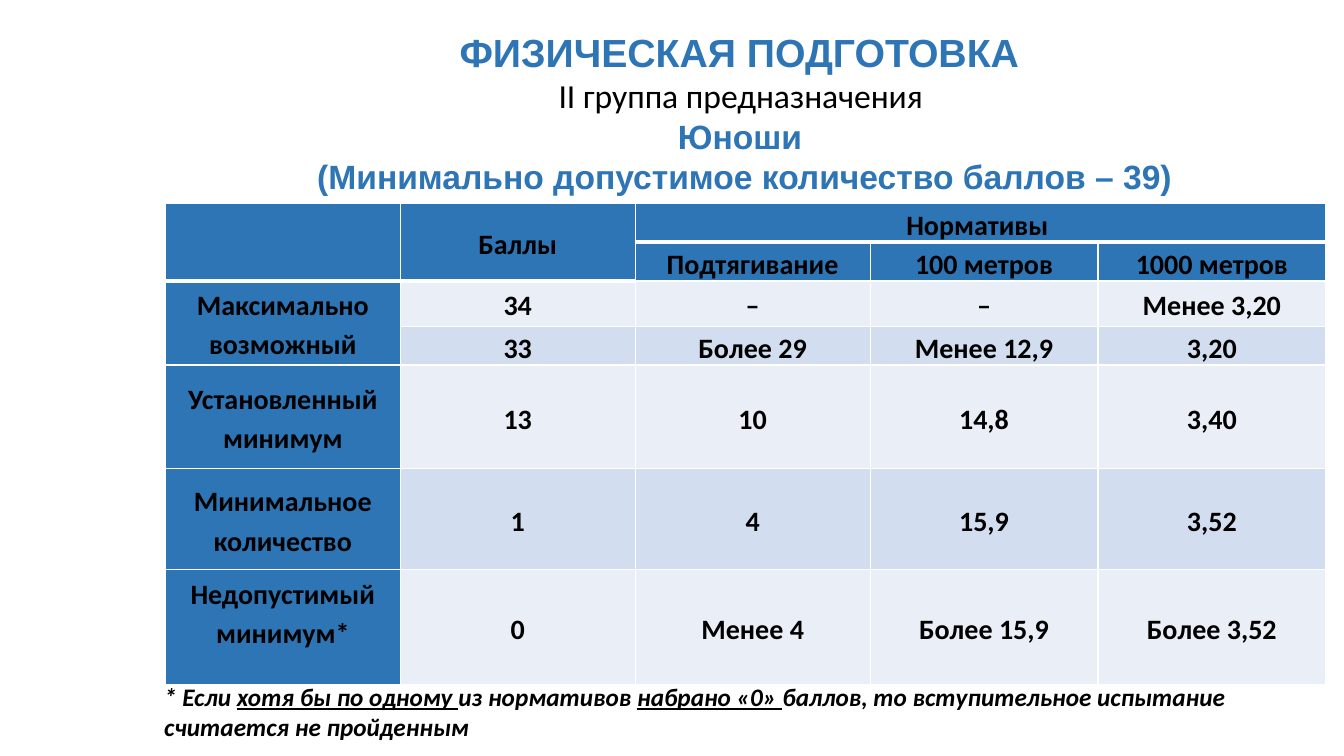
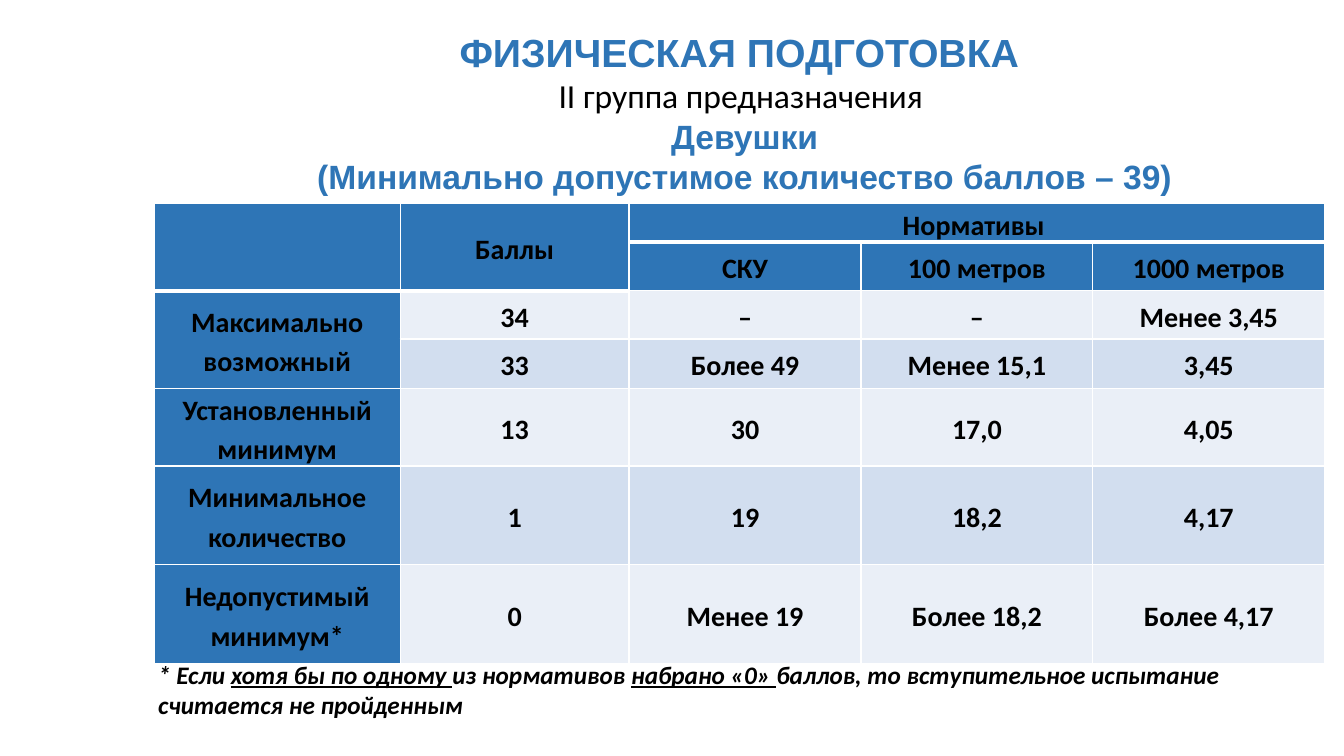
from pptx import Presentation
from pptx.dml.color import RGBColor
from pptx.enum.text import MSO_ANCHOR, PP_ALIGN
from pptx.oxml import parse_xml
from pptx.oxml.ns import nsdecls
from pptx.util import Pt

PX = 9144  # one hundredth of an inch
BLUE, PALE, SOFT = "2E75B6", "EAEFF7", "D2DEEF"
BLACK, WHITE = "000000", "FFFFFF"


def color(code):
    return RGBColor.from_string(code)


def style(font, name, size, code, bold=True):
    font.name, font.size, font.bold = name, Pt(size), bold
    font.color.rgb = color(code)


# Wording and sizes
HEADS = ["Максимально возможный", "", "Установленный минимум",
         "Минимальное количество", "Недопустимый минимум*"]
POINTS = ["34", "33", "13", "1", "0"]
NOTE = ["* Если ", "хотя бы по одному ", "из нормативов ", "набрано «0» ",
        "баллов, то вступительное испытание считается не пройденным"]

PAGES = [
    {"group": "Юноши ", "test": "Подтягивание", "left": 164,
     "cols": [233, 233, 233, 226, 226],
     "rows": [38, 38, 45, 38, 103, 100, 114],
     "lift": 30, "note": (153, 671, 1160, 71),
     "norms": [["–", "–", "Менее 3,20"],
               ["Более 29", "Менее 12,9", "3,20"],
               ["10", "14,8", "3,40"],
               ["4", "15,9", "3,52"],
               ["Менее 4", "Более 15,9", "Более 3,52"]]},
    {"group": "Девушки", "test": "СКУ", "left": 153,
     "cols": [244, 227, 230, 230, 230],
     "rows": [38, 48, 48, 49, 77, 98, 98],
     "lift": 0, "note": (147, 649, 1167, 71),
     "norms": [["–", "–", "Менее 3,45"],
               ["Более 49", "Менее 15,1", "3,45"],
               ["30", "17,0", "4,05"],
               ["19", "18,2", "4,17"],
               ["Менее 19", "Более 18,2", "Более 4,17"]]},
]

deck = Presentation()
deck.slide_width, deck.slide_height = 1333 * PX, 750 * PX

for page in PAGES:
    slide = deck.slides.add_slide(deck.slide_layouts[6])

    # Title block
    box = slide.shapes.add_textbox(164 * PX, 23 * PX, 1149 * PX, 178 * PX)
    frame = box.text_frame
    frame.word_wrap = True
    lines = [("ФИЗИЧЕСКАЯ ПОДГОТОВКА ", "Arial", 28, BLUE, True),
             ("ΙΙ группа предназначения ", "Calibri", 24, BLACK, False),
             (page["group"], "Arial", 24, BLUE, True),
             ("(Минимально допустимое количество баллов – 39)",
              "Arial", 24, BLUE, True)]
    frame.text = "\n".join(line[0] for line in lines)
    for para, line in zip(frame.paragraphs, lines):
        para.alignment = PP_ALIGN.CENTER
        style(para.runs[0].font, *line[1:])

    # Table of norms
    grid = [["", "Баллы", "Нормативы ", "", ""],
            ["", "", page["test"], "100 метров", "1000 метров"]]
    for head, point, norms in zip(HEADS, POINTS, page["norms"]):
        grid.append([head, point, *norms])
    cols, rows = page["cols"], page["rows"]
    table = slide.shapes.add_table(
        len(rows), len(cols), page["left"] * PX, 202 * PX,
        sum(cols) * PX, sum(rows) * PX).table
    table.first_row = table.horz_banding = False
    for col, width in zip(table.columns, cols):
        col.width = width * PX
    for row, height in zip(table.rows, rows):
        row.height = height * PX
    for top, left, low, right in [(0, 0, 1, 0), (0, 1, 1, 1),
                                  (0, 2, 0, 4), (2, 0, 3, 0)]:
        table.cell(top, left).merge(table.cell(low, right))

    for r, words in enumerate(grid):
        for c, word in enumerate(words):
            cell = table.cell(r, c)
            cell.margin_left = cell.margin_right = 7 * PX
            cell.margin_top = cell.margin_bottom = 0
            cell.vertical_anchor = MSO_ANCHOR.MIDDLE
            cell.fill.solid()
            band = SOFT if r % 2 else PALE
            cell.fill.fore_color.rgb = color(BLUE if r < 2 or c == 0 else band)
            if word:
                cell.text_frame.text = word
                para = cell.text_frame.paragraphs[0]
                para.alignment = PP_ALIGN.CENTER
                para.line_spacing = 1.15
                style(para.runs[0].font, "Calibri", 20, BLACK)

            # White borders, thick below the header cells
            base = 3 if r == 0 or (r == 1 and c < 2) else 1
            peak = 3 if (r == 1 and c > 1) or (r == 2 and c < 2) else 1
            sides = [("L", 1), ("R", 1), ("T", peak), ("B", base)]
            for spot, (side, width) in enumerate(sides):
                cell._tc.get_or_add_tcPr().insert(spot, parse_xml(
                    f'<a:ln{side} {nsdecls("a")} w="{Pt(width)}"><a:solidFill>'
                    f'<a:srgbClr val="{WHITE}"/></a:solidFill></a:ln{side}>'))
    table.cell(len(rows) - 1, 0).margin_bottom = page["lift"] * PX

    # Footnote
    box = slide.shapes.add_textbox(*[n * PX for n in page["note"]])
    box.text_frame.word_wrap = True
    para = box.text_frame.paragraphs[0]
    for n, part in enumerate(NOTE):
        run = para.add_run()
        run.text = part
        style(run.font, "Calibri", 18, BLACK)
        run.font.italic = True
        run.font.underline = n % 2 == 1

deck.save("out.pptx")
